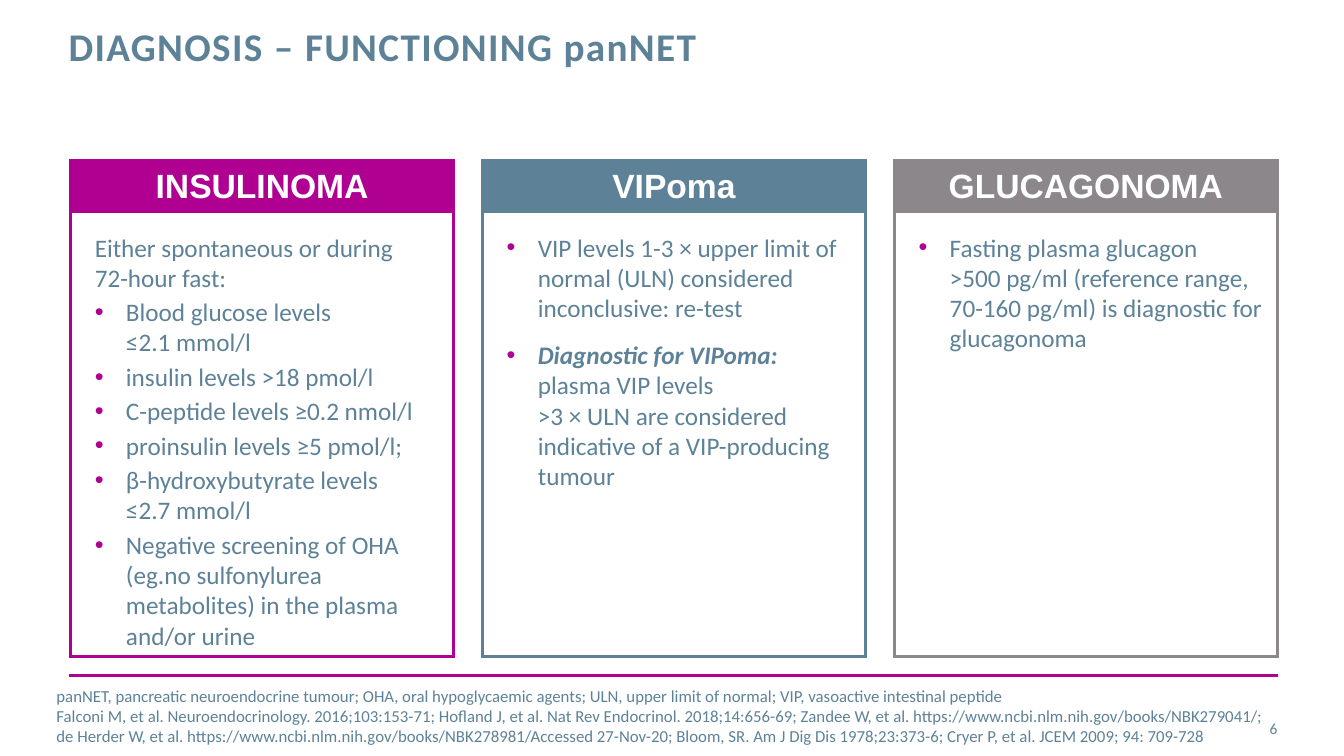
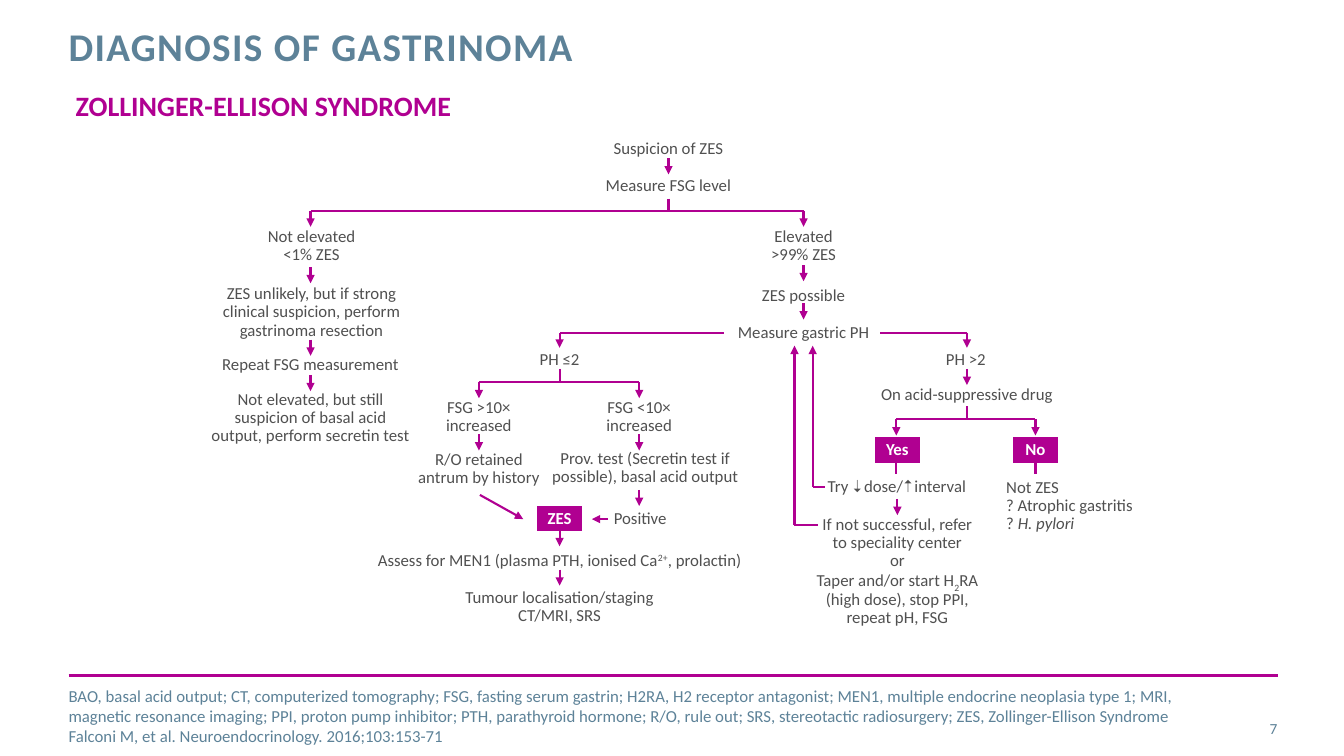
from lxml.etree import SubElement
from pptx import Presentation
from pptx.dml.color import RGBColor
from pptx.enum.shapes import MSO_CONNECTOR, MSO_SHAPE
from pptx.enum.text import MSO_ANCHOR, PP_ALIGN
from pptx.oxml.ns import qn
from pptx.util import Pt

PX = 9144  # one px is a hundredth of an inch

MAGENTA = RGBColor(0xB0, 0x00, 0x91)
BLUE = RGBColor(0x5D, 0x82, 0x98)
GREY = RGBColor(0x8B, 0x87, 0x8B)
DARK = RGBColor(0x50, 0x50, 0x50)
WHITE = RGBColor(0xFF, 0xFF, 0xFF)

# Font formats
TITLE = dict(name="Calibri", size=Pt(28), bold=True, color=BLUE, spc=100)
SUBTITLE = dict(name="Calibri", size=Pt(20), bold=True, color=MAGENTA)
HEADING = dict(name="Arial", size=Pt(24), bold=True, color=WHITE)
BODY = dict(name="Calibri", size=Pt(18), color=BLUE)
FOOTNOTE = dict(name="Calibri", size=Pt(12), color=BLUE)
NUMBER = dict(name="Calibri", size=Pt(11), color=BLUE)
STEP = dict(name="Calibri", size=Pt(12), color=DARK)
BADGE = dict(name="Calibri", size=Pt(12), bold=True, color=WHITE)

# Paragraph formats
CENTRED = dict(alignment=PP_ALIGN.CENTER)
TIGHT = dict(line_spacing=0.9)
TIGHT_CENTRED = CENTRED | TIGHT

# Slide content: first slide
PANNET = dict(
    title="DIAGNOSIS – FUNCTIONING panNET",
    number="6",
    notes_at=(56, 1202),
    footnotes=[
        "panNET, pancreatic neuroendocrine tumour; OHA, oral hypoglycaemic agents; "
        "ULN, upper limit of normal; VIP, vasoactive intestinal peptide",
        "Falconi M, et al. Neuroendocrinology. 2016;103:153-71; Hofland J, et al. "
        "Nat Rev Endocrinol. 2018;14:656-69; Zandee W, et al. "
        "https://www.ncbi.nlm.nih.gov/books/NBK279041/; de Herder W, et al. "
        "https://www.ncbi.nlm.nih.gov/books/NBK278981/Accessed 27-Nov-20; "
        "Bloom, SR. Am J Dig Dis 1978;23:373-6; Cryer P, et al. JCEM 2009; 94: 709-728",
    ],
)
# heading, colour, space before, lead-in, bullets
TUMOURS = [
    ("INSULINOMA", MAGENTA, 3, ["Either spontaneous or during\n72-hour fast:"], [
        "Blood glucose levels\n≤2.1 mmol/l",
        "insulin levels >18 pmol/l",
        "C-peptide levels ≥0.2 nmol/l",
        "proinsulin levels ≥5 pmol/l;",
        "β-hydroxybutyrate levels\n≤2.7 mmol/l",
        "Negative screening of OHA (eg.no sulfonylurea metabolites) "
        "in the plasma and/or urine",
    ]),
    ("VIPoma", BLUE, 12, [], [
        "VIP levels 1-3 × upper limit of normal (ULN) considered inconclusive: re-test",
        [("Diagnostic for VIPoma:", dict(bold=True, italic=True)),
         ("\nplasma VIP levels\n>3 × ULN are considered indicative of "
          "a VIP-producing tumour", {})],
    ]),
    ("GLUCAGONOMA", GREY, 12, [], [
        "Fasting plasma glucagon\n>500 pg/ml (reference range, 70-160 pg/ml) "
        "is diagnostic for glucagonoma",
    ]),
]

# Slide content: second slide
GASTRINOMA = dict(
    title="DIAGNOSIS OF GASTRINOMA",
    number="7",
    notes_at=(68, 1113),
    footnotes=[
        "BAO, basal acid output; CT, computerized tomography; FSG, fasting serum gastrin; "
        "H2RA, H2 receptor antagonist; MEN1, multiple endocrine neoplasia type 1; "
        "MRI, magnetic resonance imaging; PPI, proton pump inhibitor; "
        "PTH, parathyroid hormone; R/O, rule out; SRS, stereotactic radiosurgery; "
        "ZES, Zollinger-Ellison Syndrome",
        "Falconi M, et al. Neuroendocrinology. 2016;103:153-71",
    ],
)
SYNDROME = "ZOLLINGER-ELLISON SYNDROME"
# centre, top, width, text
STEPS = [
    (663, 139, 110, "Suspicion of ZES"),
    (663, 176, 126, "Measure FSG level"),
    (309, 226, 88, "Not elevated\n<1% ZES"),
    (309, 283, 178, "ZES unlikely, but if strong\nclinical suspicion, perform\n"
                    "gastrinoma resection"),
    (308, 353, 177, "Repeat FSG measurement"),
    (308, 388, 198, "Not elevated, but still\nsuspicion of basal acid\n"
                    "output, perform secretin test"),
    (797, 226, 65, "Elevated\n>99% ZES"),
    (797, 285, 83, "ZES possible"),
    (797, 321, 132, "Measure gastric PH"),
    (555, 348, 40, "PH ≤2"),
    (958, 348, 40, "PH >2"),
    (959, 383, 172, "On acid-suppressive drug"),
    (475, 396, 66, "FSG >10×\nincreased"),
    (634, 396, 66, "FSG <10×\nincreased"),
    (475, 447, 121, "R/O retained\nantrum by history"),
    (640, 446, 187, "Prov. test (Secretin test if\npossible), basal acid output"),
    (635, 506, 53, "Positive"),
    (555, 548, 372, [("Assess for MEN1 (plasma PTH, ionised Ca", {}),
                     ("2+", dict(baseline=30000)), (", prolactin)", {})]),
    (555, 584, 188, "Tumour localisation/staging\nCT/MRI, SRS"),
    (890, 512, 165, [("If not successful, refer\nto speciality center\nor\n"
                      "Taper and/or start H", {}), ("2", dict(baseline=-25000)),
                     ("RA\n(high dose), stop PPI,\nrepeat pH, FSG", {})]),
]
NOT_ZES = [("Not ZES\n? Atrophic gastritis\n? ", {}), ("H. pylori", dict(italic=True))]
# Dose step: words set on tab stops, with a turned arrow in each gap
DOSE_STEP, DOSE_TABS = "Try\tdose/\tinterval", (36, 86)
DOSE_ARROWS = [(842, 90), (892, 270)]  # left, rotation
# centre, top
BADGES = [("ZES", 555, 503), ("Yes", 890, 435), ("No", 1027, 435)]
# x, top of the short down arrows
DOWN_ARROWS = [
    (663, 157), (308, 265), (308, 337), (308, 372), (797, 263), (797, 301),
    (959, 366), (475, 431), (634, 431), (634, 486), (555, 526), (555, 565), (890, 495),
]
# x, top of the short plain stems
STEMS = [(663, 197), (555, 366), (959, 403), (889, 458), (1027, 458)]
# left, right, level of the forks
FORKS = [(308, 797, 209), (475, 634, 379), (889, 1027, 416)]
# Routes that end in an arrowhead
ROUTES = [
    [(718, 330), (555, 330), (555, 345)],
    [(873, 330), (959, 330), (959, 345)],
    [(811, 521), (788, 521), (788, 343)],
    [(818, 483), (806, 483), (806, 343)],
    [(603, 515), (587, 515)],
    [(476, 491), (519, 515)],
]
ARROW, STEM, LINE_HEIGHT = 16, 12, 18


def px(*lengths):
    return [round(length * PX) for length in lengths]


def add_text(paragraph, content, style):
    """Write a string or a list of (text, extra format) runs."""
    for text, extra in [(content, {})] if isinstance(content, str) else content:
        for i, line in enumerate(text.split("\n")):
            if i:
                paragraph.add_line_break()
            if not line:
                continue
            run = paragraph.add_run()
            run.text = line
            for key, value in (style | extra).items():
                if key == "color":
                    run.font.color.rgb = value
                elif key in ("spc", "baseline"):
                    run.font._element.set(key, str(value))
                else:
                    setattr(run.font, key, value)


def add_bullet(paragraph):
    pPr = paragraph._p.get_or_add_pPr()
    for key, value in zip(("marL", "indent"), px(31, -31)):
        pPr.set(key, str(value))
    SubElement(SubElement(pPr, qn("a:buClr")), qn("a:srgbClr"), val=str(MAGENTA))
    SubElement(pPr, qn("a:buFont"), typeface="Arial")
    SubElement(pPr, qn("a:buChar"), char="•")


def fill_frame(frame, contents, style, layout=None, anchor=MSO_ANCHOR.TOP,
               insets=(0, 0, 0, 0), wrap=True, bullets_from=None, gap=0, tabs=()):
    frame.word_wrap = wrap
    frame.vertical_anchor = anchor
    for side, inset in zip(("left", "top", "right", "bottom"), px(*insets)):
        setattr(frame, f"margin_{side}", inset)
    for i, content in enumerate(contents):
        paragraph = frame.add_paragraph() if i else frame.paragraphs[0]
        if bullets_from is not None and i >= bullets_from:
            add_bullet(paragraph)
        if tabs:
            stops = SubElement(paragraph._p.get_or_add_pPr(), qn("a:tabLst"))
            for stop in px(*tabs):
                SubElement(stops, qn("a:tab"), pos=str(stop), algn="l")
        if i and gap:
            paragraph.space_before = Pt(gap)
        for key, value in (layout or {}).items():
            setattr(paragraph, key, value)
        add_text(paragraph, content, style)


def add_label(slide, place, contents, style, rotation=0, **options):
    label = slide.shapes.add_textbox(*px(*place))
    label.rotation = rotation
    fill_frame(label.text_frame, contents, style, **options)


def add_panel(slide, place, line, width, fill=None):
    panel = slide.shapes.add_shape(MSO_SHAPE.RECTANGLE, *px(*place))
    panel.shadow.inherit = False
    if fill is None:
        panel.fill.background()
    else:
        panel.fill.solid()
        panel.fill.fore_color.rgb = fill
    panel.line.color.rgb = line
    panel.line.width = Pt(width)
    SubElement(panel.line._get_or_add_ln(), qn("a:miter"), lim="800000")
    return panel.text_frame


def add_route(slide, points, arrow=True, width=1.5):
    """Join the points by straight lines, with an arrowhead at the last one."""
    for start, end in zip(points, points[1:]):
        link = slide.shapes.add_connector(MSO_CONNECTOR.STRAIGHT, *px(*start, *end))
        link.line.color.rgb = MAGENTA
        link.line.width = Pt(width)
        if arrow and end == points[-1]:
            SubElement(link.line._get_or_add_ln(), qn("a:tailEnd"), type="triangle")
        SubElement(link._element.spPr, qn("a:effectLst"))


def start_slide(deck, title, number, notes_at, footnotes):
    """Add a slide with the shared title, rule, footnotes and number."""
    slide = deck.slides.add_slide(deck.slide_layouts[6])
    add_route(slide, [(68, 670), (1268, 670)], arrow=False, width=2)
    add_label(slide, (68, 27, 956, 88), [title], TITLE, layout=dict(line_spacing=Pt(30)))
    add_label(slide, (1181, 703, 86, 40), [number], NUMBER,
              layout=dict(alignment=PP_ALIGN.RIGHT), anchor=MSO_ANCHOR.MIDDLE)
    left, width = notes_at
    add_label(slide, (left, 690, width, 40), footnotes, FOOTNOTE, anchor=MSO_ANCHOR.MIDDLE)
    return slide


def build_pannet(deck):
    slide = start_slide(deck, **PANNET)
    first, last, width = 70, 887, 380
    step = (last - first) / (len(TUMOURS) - 1)
    for i, (heading, colour, gap, lead_in, bullets) in enumerate(TUMOURS):
        left = first + i * step
        fill_frame(add_panel(slide, (left, 210, width, 441), colour, 2.25),
                   lead_in + bullets, BODY, layout=dict(alignment=PP_ALIGN.LEFT),
                   insets=(24, 20, 12, 0), bullets_from=len(lead_in), gap=gap)
        fill_frame(add_panel(slide, (left, 159, width, 50), colour, 2.25, colour),
                   [heading], HEADING, layout=CENTRED, anchor=MSO_ANCHOR.MIDDLE)


def build_gastrinoma(deck):
    slide = start_slide(deck, **GASTRINOMA)
    add_label(slide, (75, 88, 376, 34), [SYNDROME], SUBTITLE, wrap=False)
    # Lines and arrows
    for x, top in STEMS:
        add_route(slide, [(x, top), (x, top + STEM)], arrow=False)
    for x, top in DOWN_ARROWS:
        add_route(slide, [(x, top), (x, top + ARROW)])
    for left, right, level in FORKS:
        add_route(slide, [(left, level), (right, level)], arrow=False)
        for x in (left, right):
            add_route(slide, [(x, level), (x, level + ARROW)])
    for points in ROUTES:
        add_route(slide, points)
    # Steps and outcomes
    for centre, top, width, step in STEPS:
        words = step if isinstance(step, str) else "".join(text for text, _ in step)
        height = LINE_HEIGHT * (words.count("\n") + 1)
        add_label(slide, (centre - width / 2, top, width, height), [step], STEP,
                  layout=TIGHT_CENTRED, wrap=False)
    add_label(slide, (821, 474, 150, LINE_HEIGHT), [DOSE_STEP], STEP,
              layout=TIGHT, tabs=DOSE_TABS)
    for left, rotation in DOSE_ARROWS:
        add_label(slide, (left, 474, 17, LINE_HEIGHT), ["➝"], STEP, rotation,
                  layout=TIGHT_CENTRED, wrap=False)
    add_label(slide, (998, 475, 127, 3 * LINE_HEIGHT), [NOT_ZES], STEP,
              layout=TIGHT, wrap=False)
    for answer, centre, top in BADGES:
        fill_frame(add_panel(slide, (centre - 21, top, 42, 23), MAGENTA, 1.5, MAGENTA),
                   [answer], BADGE, layout=TIGHT_CENTRED, anchor=MSO_ANCHOR.MIDDLE)


def main():
    deck = Presentation()
    deck.slide_width, deck.slide_height = px(1333, 750)
    build_pannet(deck)
    build_gastrinoma(deck)
    deck.save("out.pptx")


if __name__ == "__main__":
    main()
